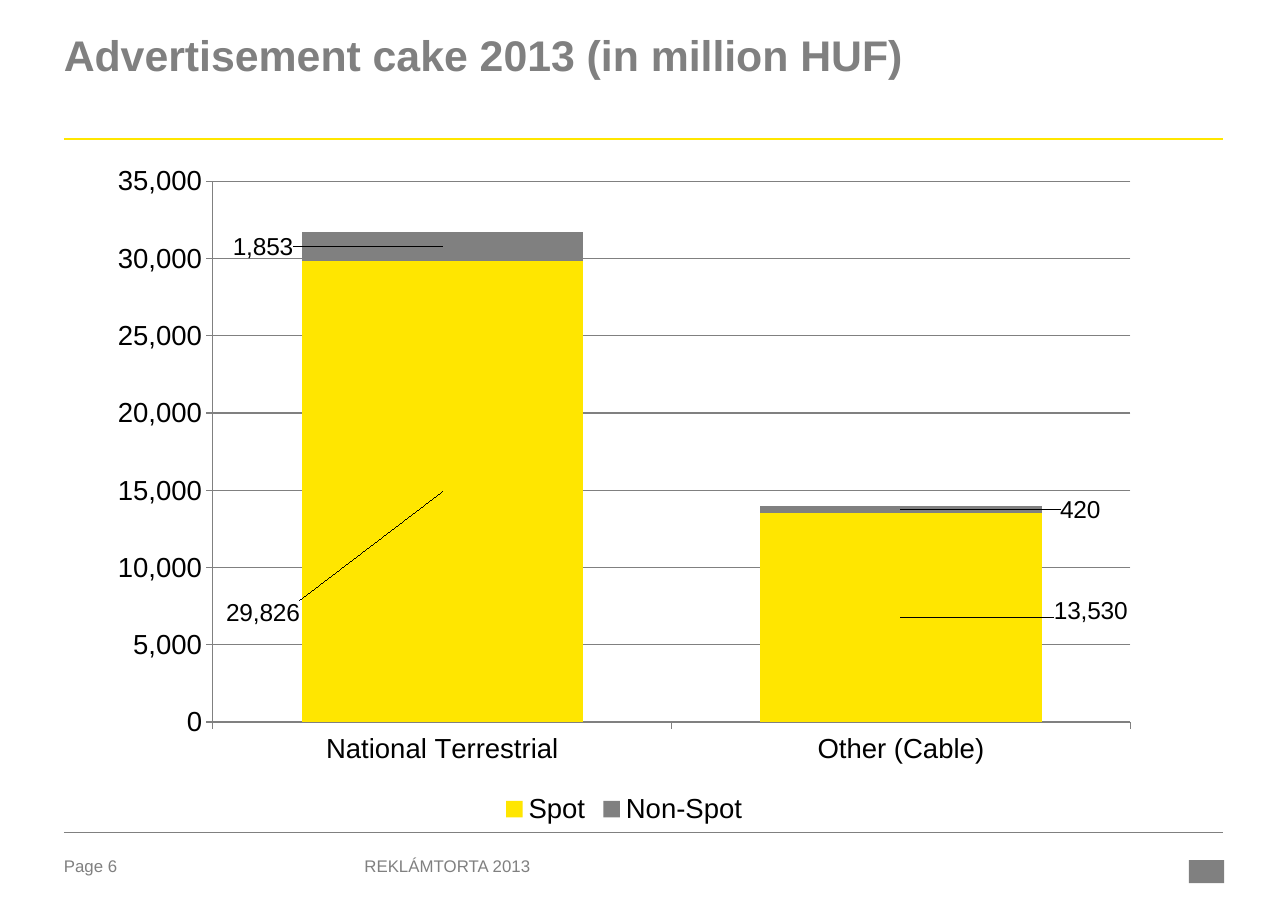
from pptx import Presentation
from pptx.chart.data import CategoryChartData as ChartData
from pptx.dml.color import RGBColor as Rgb
from pptx.enum.chart import XL_CHART_TYPE as Kind
from pptx.enum.chart import XL_LABEL_POSITION as Spot
from pptx.enum.chart import XL_LEGEND_POSITION as Legend
from pptx.enum.chart import XL_TICK_MARK as Tick
from pptx.enum.shapes import MSO_CONNECTOR as Link
from pptx.enum.shapes import MSO_SHAPE as Form
from pptx.oxml import parse_xml
from pptx.oxml.ns import nsdecls, qn
from pptx.util import Inches, Pt

FACE = "Arial"
COLORS = {"yellow": "FFE600", "gray": "808080", "black": "000000"}
LEFT, RIGHT = 0.58, 11.11
CATS = ["National Terrestrial", "Other (Cable)"]
SERIES = [
    ("Spot", [29826, 13530], "yellow", [(-0.17, 0.18), (0.18, -0.01)]),
    ("Non-Spot", [1853, 420], "gray", [(-0.17, 0), (0.17, 0)]),
]
NUMBER = "#,##0"


def color(name):
    return Rgb.from_string(COLORS[name])


def style(font, size, tint="black", bold=False):
    font.name = FACE
    font.size = Pt(size)
    font.bold = bold
    font.color.rgb = color(tint)


def add_text(slide, text, box, size=11, tint="gray", bold=False, space=1.0):
    frame = slide.shapes.add_textbox(*map(Inches, box)).text_frame
    frame.word_wrap = True
    frame.margin_left = frame.margin_right = 0
    frame.margin_top = frame.margin_bottom = 0
    para = frame.paragraphs[0]
    para.line_spacing = space
    run = para.add_run()
    run.text = text
    style(run.font, size, tint, bold)


def add_rule(slide, top, tint, width):
    ends = map(Inches, (LEFT, top, RIGHT, top))
    rule = slide.shapes.add_connector(Link.STRAIGHT, *ends)
    rule.line.color.rgb = color(tint)
    rule.line.width = Pt(width)
    rule._element.spPr.append(parse_xml(f"<a:effectLst {nsdecls('a')}/>"))


def add_mark(slide, box):
    mark = slide.shapes.add_shape(Form.RECTANGLE, *map(Inches, box))
    mark.shadow.inherit = False
    mark.fill.solid()
    mark.fill.fore_color.rgb = color("gray")
    mark.line.fill.background()


def layout(modes="", **sides):
    parts = "".join(f'<c:{key} val="{val}"/>' for key, val in sides.items())
    return parse_xml(
        f"<c:layout {nsdecls('c')}><c:manualLayout>{modes}{parts}"
        "</c:manualLayout></c:layout>"
    )


def place_plot(chart, **sides):
    area = chart._chartSpace.chart.plotArea
    for old in area.findall(qn("c:layout")):
        area.remove(old)
    modes = (
        '<c:layoutTarget val="inner"/>'
        '<c:xMode val="edge"/><c:yMode val="edge"/>'
    )
    area.insert(0, layout(modes, **sides))


def style_axis(axis):
    axis.major_tick_mark = Tick.OUTSIDE
    axis.minor_tick_mark = Tick.NONE
    axis.format.line.color.rgb = color("gray")
    axis.format.line.width = Pt(0.75)
    style(axis.tick_labels.font, 18)


def style_series(series, tint, shifts):
    series.format.fill.solid()
    series.format.fill.fore_color.rgb = color(tint)
    labels = series.data_labels
    labels.show_value = True
    labels.number_format = NUMBER
    labels.number_format_is_linked = False
    style(labels.font, 16)
    for pos in range(len(shifts)):
        label = series.points[pos].data_label
        style(label.font, 16)
        label.position = Spot.CENTER
    items = labels._element.findall(qn("c:dLbl"))
    for item, (x, y) in zip(items, shifts):
        item.insert(1, layout(x=x, y=y))


def add_bars(slide, box):
    data = ChartData(number_format=NUMBER)
    data.categories = CATS
    for name, vals, _, _ in SERIES:
        data.add_series(name, vals)
    frame = slide.shapes.add_chart(
        Kind.COLUMN_STACKED, *map(Inches, box), data
    )
    chart = frame.chart
    style(chart.font, 18)
    chart.has_title = False
    chart.has_legend = True
    chart.legend.position = Legend.BOTTOM
    chart.legend.include_in_layout = False
    style(chart.legend.font, 18)
    place_plot(chart, x=0.11, y=0.04, w=0.87, h=0.8)

    style_axis(chart.category_axis)
    scale = chart.value_axis
    style_axis(scale)
    scale.minimum_scale, scale.maximum_scale = 0, 35000
    scale.major_unit = 5000
    scale.tick_labels.number_format = NUMBER
    scale.tick_labels.number_format_is_linked = False
    scale.has_major_gridlines = True
    grid = scale.major_gridlines.format.line
    grid.color.rgb = color("gray")
    grid.width = Pt(0.75)

    plot = chart.plots[0]
    plot.gap_width, plot.overlap = 63, 100
    plot.vary_by_categories = False
    for series, (_, _, tint, shifts) in zip(plot.series, SERIES):
        style_series(series, tint, shifts)


def main():
    deck = Presentation()
    deck.slide_width, deck.slide_height = Inches(11.7), Inches(8.3)
    slide = deck.slides.add_slide(deck.slide_layouts[6])
    add_rule(slide, 1.26, "yellow", 1.5)
    add_rule(slide, 7.56, "gray", 0.25)
    add_text(
        slide, "Advertisement cake 2013 (in million HUF)",
        (LEFT, 0.33, RIGHT - LEFT, 0.94), size=28, bold=True, space=0.85,
    )
    add_bars(slide, (0.88, 1.4, 9.58, 6.14))
    add_text(slide, "Page 6", (LEFT, 7.77, 0.85, 0.24))
    add_text(slide, "REKLÁMTORTA 2013", (3.31, 7.77, 4.39, 0.24))
    add_mark(slide, (10.8, 7.81, 0.32, 0.21))
    deck.save("out.pptx")


if __name__ == "__main__":
    main()
